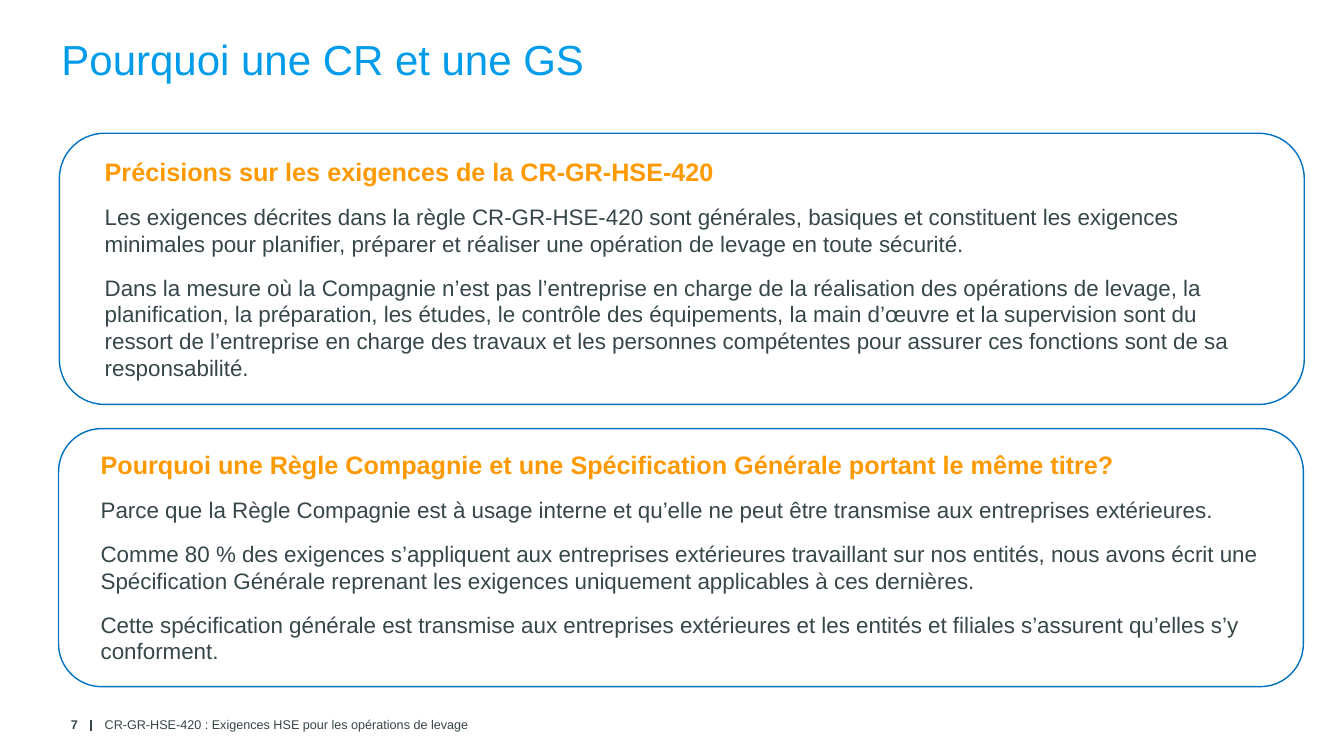
from lxml import etree
from pptx import Presentation
from pptx.dml.color import RGBColor
from pptx.enum import shapes, text
from pptx.oxml import ns
from pptx.util import Pt

SKY = RGBColor(0x00, 0x9C, 0xEA)
BLUE = RGBColor(0x00, 0x70, 0xC0)
GOLD = RGBColor(0xFF, 0x99, 0x00)
SLATE = RGBColor(0x37, 0x46, 0x49)

RULES = [
    "Précisions sur les exigences de la CR-GR-HSE-420",
    "Les exigences décrites dans la règle CR-GR-HSE-420 sont générales, basiques et constituent les exigences minimales pour planifier, préparer et réaliser une opération de levage en toute sécurité.",
    "Dans la mesure où la Compagnie n’est pas l’entreprise en charge de la réalisation des opérations de levage, la planification, la préparation, les études, le contrôle des équipements, la main d’œuvre et la supervision sont du ressort de l’entreprise en charge des travaux et les personnes compétentes pour assurer ces fonctions sont de sa responsabilité.",
]
REASONS = [
    "Pourquoi une Règle Compagnie et une Spécification Générale portant le même titre?",
    "Parce que la Règle Compagnie est à usage interne et qu’elle ne peut être transmise aux entreprises extérieures.",
    "Comme 80 % des exigences s’appliquent aux entreprises extérieures travaillant sur nos entités, nous avons écrit une Spécification Générale reprenant les exigences uniquement applicables à ces dernières.",
    "Cette spécification générale est transmise aux entreprises extérieures et les entités et filiales s’assurent qu’elles s’y conforment.",
]


def style(para, size, color, bold=False):
    """Format every run of a paragraph."""
    for run in para.runs:
        font = run.font
        font.name, font.size, font.bold = "Arial", Pt(size), bold
        font.color.rgb = color


def add_title(slide, words):
    """Place and format the title placeholder."""
    title = slide.shapes.title
    title.left, title.top = Pt(36.7), Pt(19.4)
    title.width, title.height = Pt(765.4), Pt(44.6)
    frame = title.text_frame
    frame.text = words
    frame.vertical_anchor = text.MSO_ANCHOR.MIDDLE
    para = frame.paragraphs[0]
    para.alignment = text.PP_ALIGN.LEFT
    style(para, 30, SKY)


def add_text(slide, box, lines):
    """Add a wrapping text box and return its frame."""
    frame = slide.shapes.add_textbox(*map(Pt, box)).text_frame
    frame.word_wrap = True
    frame.text = "\n".join(lines)
    return frame


def add_panel(slide, edge, box, lines):
    """Add a heading and its body text inside a rounded outline."""
    frame = add_text(slide, box, lines)
    for i, para in enumerate(frame.paragraphs):
        para.space_after = Pt(12)
        if i == 0:
            style(para, 18, GOLD, True)
        else:
            style(para, 16, SLATE)
    kind = shapes.MSO_SHAPE.ROUNDED_RECTANGLE
    shape = slide.shapes.add_shape(kind, *map(Pt, edge))
    shape.shadow.inherit = False
    shape.fill.background()
    shape.line.color.rgb = BLUE
    shape.line.width = Pt(1)


def add_note(slide, box, words, align, bold=False):
    """Add one footer text."""
    frame = add_text(slide, box, [words])
    frame.vertical_anchor = text.MSO_ANCHOR.MIDDLE
    para = frame.paragraphs[0]
    para.alignment = align
    style(para, 9, SLATE, bold)


def add_rule(slide, x, top, end):
    """Add the upright footer line."""
    kind = shapes.MSO_CONNECTOR.STRAIGHT
    line = slide.shapes.add_connector(kind, Pt(x), Pt(top), Pt(x), Pt(end))
    line.line.color.rgb = SLATE
    line.line.width = Pt(1)
    etree.SubElement(line._element.spPr, ns.qn("a:effectLst"))


def main():
    """Build and save the slide."""
    deck = Presentation()
    deck.slide_width, deck.slide_height = Pt(960), Pt(540)
    slide = deck.slides.add_slide(deck.slide_layouts[5])
    add_title(slide, "Pourquoi une CR et une GS")
    add_rule(slide, 65, 514, 522)
    add_note(slide, (17.3, 507.6, 45.4, 20.2), "7", text.PP_ALIGN.RIGHT, True)
    add_note(slide, (67.7, 507.6, 838.8, 20.2),
             "CR-GR-HSE-420 : Exigences HSE pour les opérations de levage",
             text.PP_ALIGN.LEFT)
    add_panel(slide, (42.4, 95.2, 889.2, 193.7),
              (67.7, 108, 843.1, 169.9), RULES)
    add_panel(slide, (41.8, 306.2, 889.2, 184.3),
              (64.8, 317.5, 843.1, 162.7), REASONS)
    deck.save("out.pptx")


if __name__ == "__main__":
    main()
